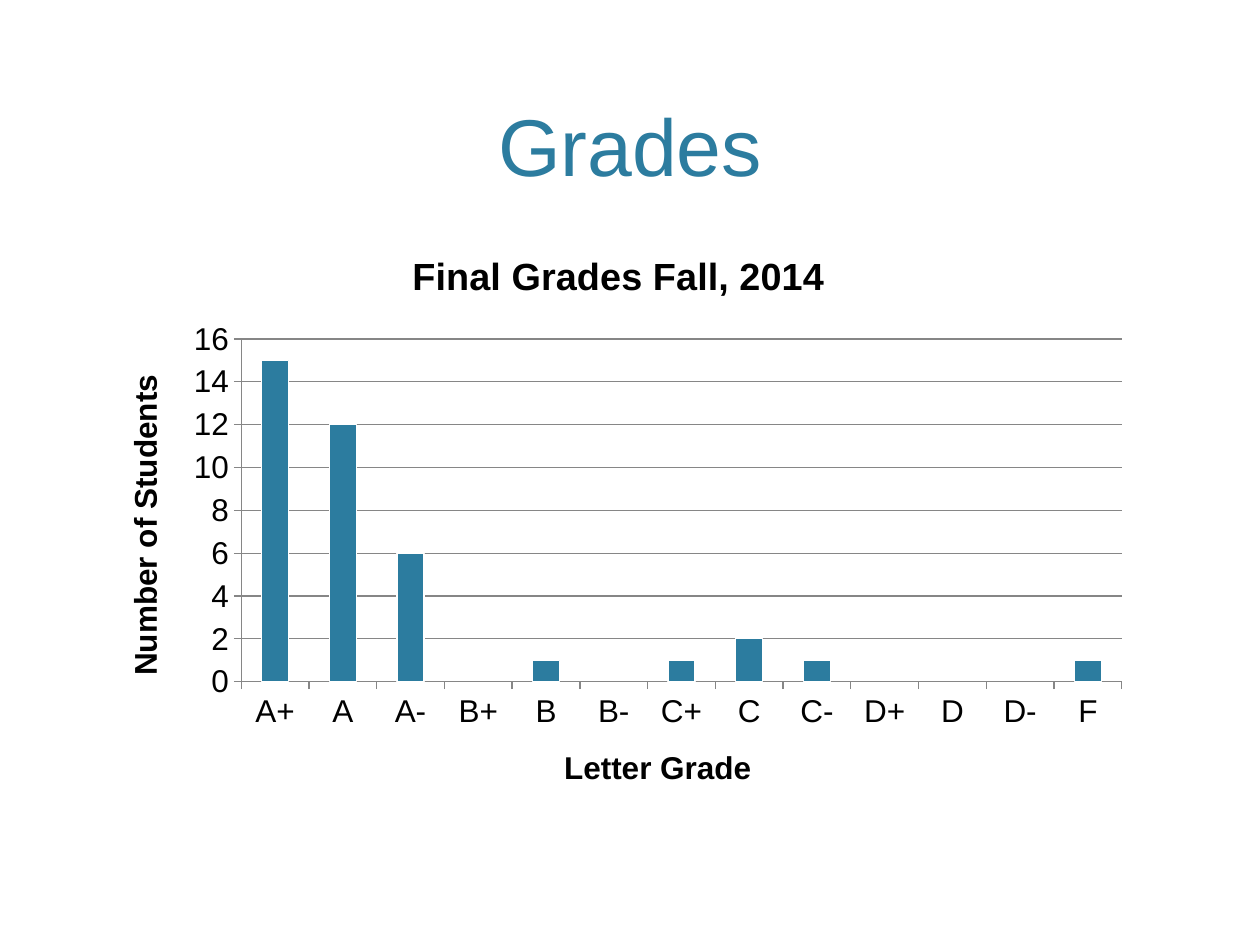
"""Build a slide with a column chart of final letter grades."""
from dataclasses import dataclass

from lxml import etree
from pptx import Presentation
from pptx.chart.chart import Chart
from pptx.chart.data import CategoryChartData
from pptx.dml.color import RGBColor
from pptx.enum.chart import XL_CHART_TYPE, XL_TICK_MARK
from pptx.enum.text import MSO_ANCHOR, PP_ALIGN
from pptx.oxml.ns import qn
from pptx.text.text import Font
from pptx.util import Pt

COLUMN_CLUSTERED = XL_CHART_TYPE.COLUMN_CLUSTERED
TICK_OUTSIDE, TICK_NONE = XL_TICK_MARK.OUTSIDE, XL_TICK_MARK.NONE
ANCHOR_BOTTOM = MSO_ANCHOR.BOTTOM
ALIGN_CENTER = PP_ALIGN.CENTER

TEAL = RGBColor(0x2C, 0x7C, 0x9F)
GRAY = RGBColor(0x86, 0x86, 0x86)
BLACK = RGBColor(0x00, 0x00, 0x00)
WHITE = RGBColor(0xFF, 0xFF, 0xFF)
FONT_NAME = "Arial"

STUDENTS_BY_GRADE = {
    "A+": 15, "A": 12, "A-": 6, "B+": None, "B": 1, "B-": None, "C+": 1,
    "C": 2, "C-": 1, "D+": None, "D": None, "D-": None, "F": 1,
}


@dataclass(frozen=True)
class AxisLabel:
    axis_name: str
    caption: str


AXIS_LABELS = (
    AxisLabel("category_axis", "Letter Grade"),
    AxisLabel("value_axis", "Number of Students"),
)
PLOT_LAYOUT = {"x": 0.14, "y": 0.19, "w": 0.84, "h": 0.58}


def style_font(font: Font, size: float, color: RGBColor, bold: bool = False) -> None:
    font.name = FONT_NAME
    font.size = Pt(size)
    font.bold = bold
    font.color.rgb = color


def style_axis(chart: Chart, label: AxisLabel) -> None:
    axis = getattr(chart, label.axis_name)
    caption = axis.axis_title.text_frame
    caption.text = label.caption
    style_font(caption.paragraphs[0].font, 18, BLACK, bold=True)
    style_font(axis.tick_labels.font, 18, BLACK)
    axis.major_tick_mark = TICK_OUTSIDE
    axis.minor_tick_mark = TICK_NONE
    axis.format.line.color.rgb = GRAY
    axis.format.line.width = Pt(0.75)


def place_plot(chart: Chart) -> None:
    plot_area = chart.plots[0]._element.getparent()
    for old_layout in plot_area.findall(qn("c:layout")):
        plot_area.remove(old_layout)
    layout = etree.Element(qn("c:layout"))
    plot_area.insert(0, layout)
    manual = etree.SubElement(layout, qn("c:manualLayout"))
    settings = {"layoutTarget": "inner", "xMode": "edge", "yMode": "edge", **PLOT_LAYOUT}
    for tag, value in settings.items():
        etree.SubElement(manual, qn(f"c:{tag}"), val=str(value))


def main() -> None:
    presentation = Presentation()
    presentation.slide_width, presentation.slide_height = Pt(720), Pt(540)
    slide = presentation.slides.add_slide(presentation.slide_layouts[6])

    heading = slide.shapes.add_textbox(Pt(43.2), Pt(8.64), Pt(633.6), Pt(105.12)).text_frame
    heading.word_wrap = True
    heading.vertical_anchor = ANCHOR_BOTTOM
    heading.text = "Grades"
    heading.paragraphs[0].alignment = ALIGN_CENTER
    style_font(heading.paragraphs[0].font, 46, TEAL)

    grade_data = CategoryChartData()
    grade_data.categories = list(STUDENTS_BY_GRADE)
    grade_data.add_series("Series 1", list(STUDENTS_BY_GRADE.values()))
    chart = slide.shapes.add_chart(
        COLUMN_CLUSTERED, Pt(54), Pt(129.6), Pt(599.04), Pt(337.68), grade_data
    ).chart
    style_font(chart.font, 18, BLACK)
    chart.has_legend = False
    chart_title = chart.chart_title.text_frame
    chart_title.text = "Final Grades Fall, 2014"
    style_font(chart_title.paragraphs[0].font, 21.6, BLACK, bold=True)

    for label in AXIS_LABELS:
        style_axis(chart, label)
    student_axis = chart.value_axis
    student_axis.minimum_scale, student_axis.maximum_scale = 0, 16
    student_axis.major_unit = 2
    student_axis.major_gridlines.format.line.color.rgb = GRAY
    student_axis.major_gridlines.format.line.width = Pt(0.75)
    place_plot(chart)

    columns = chart.plots[0]
    columns.gap_width = 150
    columns.vary_by_categories = False
    student_counts = columns.series[0]
    student_counts.format.fill.solid()
    student_counts.format.fill.fore_color.rgb = TEAL
    student_counts.format.line.color.rgb = WHITE
    student_counts.format.line.width = Pt(0.75)

    presentation.save("out.pptx")


if __name__ == "__main__":
    main()
